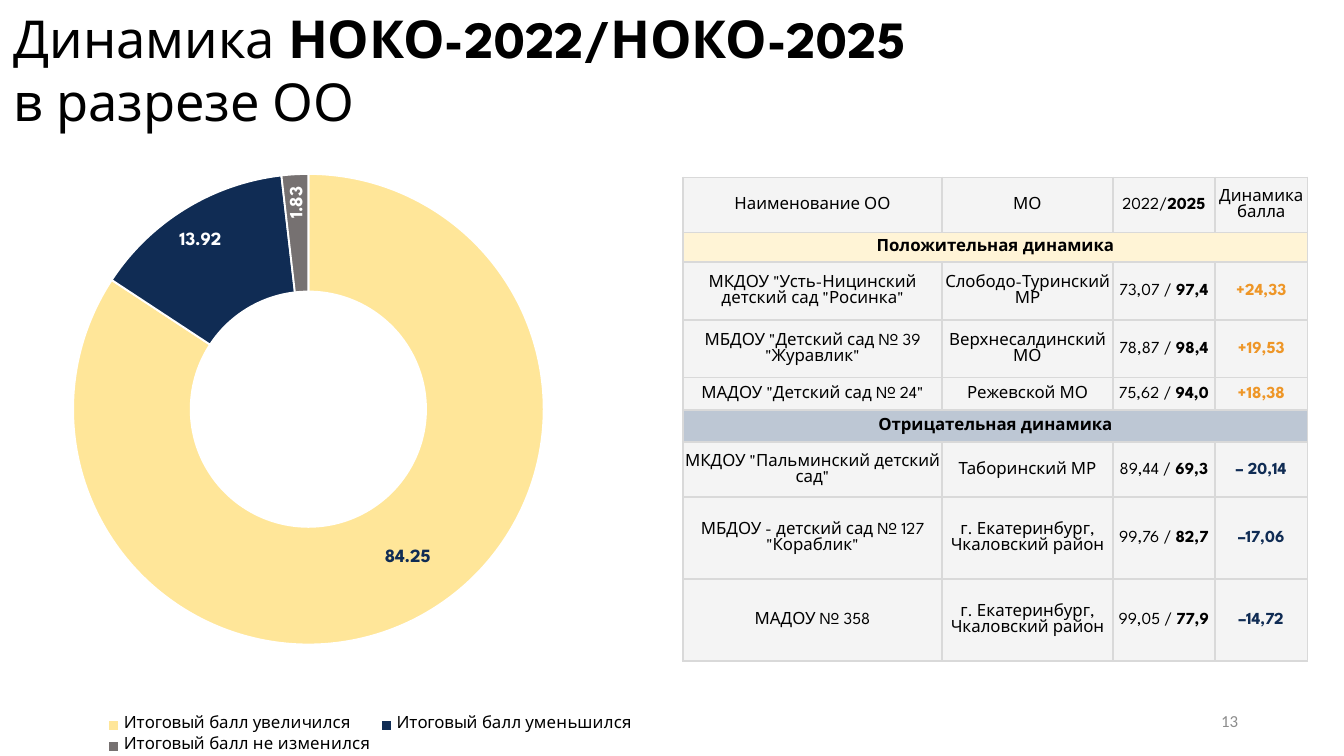
import pptx
import pptx.chart.data
import pptx.dml.color
import pptx.enum.chart
import pptx.enum.text
import pptx.oxml
import pptx.oxml.ns
import pptx.util

Inches, Pt = pptx.util.Inches, pptx.util.Pt
RGBColor = pptx.dml.color.RGBColor
PP_ALIGN = pptx.enum.text.PP_ALIGN
MSO_ANCHOR = pptx.enum.text.MSO_ANCHOR

BLACK = RGBColor(0x00, 0x00, 0x00)
WHITE = RGBColor(0xFF, 0xFF, 0xFF)
GRAY = RGBColor(0x8C, 0x8C, 0x8C)
NAVY = RGBColor(0x10, 0x2C, 0x54)
YELLOW = RGBColor(0xFF, 0xE6, 0x99)
STONE = RGBColor(0x76, 0x71, 0x71)
ORANGE = RGBColor(0xEE, 0x96, 0x27)
CELL_GRAY = RGBColor(0xF2, 0xF2, 0xF2)
PALE_YELLOW = RGBColor(0xFF, 0xF2, 0xCC)
PALE_BLUE = RGBColor(0xAD, 0xB9, 0xCA)
BORDER = RGBColor(0xD9, 0xD9, 0xD9)
FONT = "League Spartan"

TITLE = [
    [("Динамика ", False), ("НОКО-2022/НОКО-2025", True)],
    [("в разрезе ОО", False)],
]
PAGE_NUMBER = "13"

# category, share, slice colour, label colour, label shift as part of the chart
SHARES = [
    ("Итоговый балл увеличился", 84.25, YELLOW, NAVY, (0.02, -0.01)),
    ("Итоговый балл уменьшился", 13.92, NAVY, WHITE, (-0.02, -0.03)),
    ("Итоговый балл не изменился", 1.83, STONE, WHITE, (0, -0.05)),
]

HEADER = ("Наименование ОО", "МО", "2022/", "2025", "Динамика балла")
# heading, heading fill, change colour, rows of: name, area, 2022, 2025, change
GROUPS = [
    ("Положительная динамика", PALE_YELLOW, ORANGE, [
        ('МКДОУ "Усть-Ницинский детский сад "Росинка"',
         "Слободо-Туринский МР", "73,07 / ", "97,4", "+24,33"),
        ('МБДОУ "Детский сад № 39 "Журавлик"',
         "Верхнесалдинский МО", "78,87 / ", "98,4", "+19,53"),
        ('МАДОУ "Детский сад № 24"', "Режевской МО", "75,62 / ", "94,0", "+18,38"),
    ]),
    ("Отрицательная динамика", PALE_BLUE, NAVY, [
        ('МКДОУ "Пальминский детский сад"',
         "Таборинский МР", "89,44 / ", "69,3", "– 20,14"),
        ('МБДОУ - детский сад № 127 "Кораблик"',
         "г. Екатеринбург, Чкаловский район", "99,76 / ", "82,7", "–17,06"),
        ("МАДОУ № 358",
         "г. Екатеринбург, Чкаловский район", "99,05 / ", "77,9", "–14,72"),
    ]),
]
COLUMN_WIDTHS = [1.93, 1.27, 0.76, 0.69]
ROW_HEIGHTS = [0.41, 0.22, 0.43, 0.43, 0.24, 0.24, 0.41, 0.61, 0.61]


def add_text(paragraph, text, size=9, bold=False, color=BLACK, font=FONT):
    run = paragraph.add_run()
    run.text = text
    run.font.size = Pt(size)
    run.font.bold = bold
    run.font.name = font
    run.font.color.rgb = color


def style_cell(cell, fill):
    """Set margins, a fill of 80 % opacity and thin borders on all sides."""
    cell.margin_left = cell.margin_right = cell.margin_top = Inches(0.01)
    cell.margin_bottom = 0
    cell.vertical_anchor = MSO_ANCHOR.MIDDLE
    cell.fill.solid()
    cell.fill.fore_color.rgb = fill
    properties = cell._tc.get_or_add_tcPr()
    namespace = pptx.oxml.ns.nsdecls("a")
    shade = properties.find(".//" + pptx.oxml.ns.qn("a:srgbClr"))
    shade.append(pptx.oxml.parse_xml(f'<a:alpha {namespace} val="80000"/>'))
    for position, side in enumerate(("lnL", "lnR", "lnT", "lnB")):
        properties.insert(position, pptx.oxml.parse_xml(
            f'<a:{side} {namespace} w="12700"><a:solidFill>'
            f'<a:srgbClr val="{BORDER}"/></a:solidFill></a:{side}>'))


def fill_cell(cell, parts):
    """Write (text, bold, colour) parts as one centred paragraph."""
    paragraph = cell.text_frame.paragraphs[0]
    paragraph.alignment = PP_ALIGN.CENTER
    for text, bold, color in parts:
        add_text(paragraph, text, bold=bold, color=color)


def fill_row(cells, content, change_bold, change_color):
    name, area, before, after, change = content
    columns = [
        [(name, False, BLACK)],
        [(area, False, BLACK)],
        [(before, False, BLACK), (after, True, BLACK)],
        [(change, change_bold, change_color)],
    ]
    for cell, parts in zip(cells, columns):
        style_cell(cell, CELL_GRAY)
        fill_cell(cell, parts)


def manual_layout(modes=("xMode", "yMode"), target="", **values):
    parts = [("layoutTarget", target)] if target else []
    parts += [(mode, "edge") for mode in modes]
    parts += values.items()
    body = "".join(f'<c:{tag} val="{value}"/>' for tag, value in parts)
    return pptx.oxml.parse_xml(
        f'<c:layout {pptx.oxml.ns.nsdecls("c")}>'
        f'<c:manualLayout>{body}</c:manualLayout></c:layout>')


def add_title(slide):
    title = slide.shapes.title
    title.left, title.top, title.width, title.height = 0, 0, Inches(10), Inches(1.04)
    frame = title.text_frame
    frame.vertical_anchor = MSO_ANCHOR.TOP
    frame.auto_size = pptx.enum.text.MSO_AUTO_SIZE.SHAPE_TO_FIT_TEXT
    for index, line in enumerate(TITLE):
        paragraph = frame.add_paragraph() if index else frame.paragraphs[0]
        paragraph.alignment = PP_ALIGN.LEFT
        for text, bold in line:
            add_text(paragraph, text, size=28, bold=bold)


def add_page_number(slide):
    box = slide.shapes.add_textbox(Inches(7.06), Inches(5.21), Inches(2.25), Inches(0.3))
    frame = box.text_frame
    frame.word_wrap = True
    frame.vertical_anchor = MSO_ANCHOR.MIDDLE
    frame.paragraphs[0].alignment = PP_ALIGN.RIGHT
    add_text(frame.paragraphs[0], PAGE_NUMBER, color=GRAY, font="Calibri")


def add_share_chart(slide):
    data = pptx.chart.data.CategoryChartData(number_format="0.00")
    data.categories = [share[0] for share in SHARES]
    data.add_series("Series 1", [share[1] for share in SHARES])
    chart = slide.shapes.add_chart(
        pptx.enum.chart.XL_CHART_TYPE.DOUGHNUT,
        Inches(-0.12), Inches(1.16), Inches(5.75), Inches(4.49), data).chart
    chart.has_title = False
    chart.font.name = FONT
    chart.font.size = Pt(10)
    chart.font.color.rgb = BLACK
    chart.has_legend = True
    legend = chart.legend
    legend.position = pptx.enum.chart.XL_LEGEND_POSITION.BOTTOM
    legend.include_in_layout = False
    legend.font.size = Pt(9)
    legend.font.name = FONT
    legend.font.color.rgb = BLACK
    legend._element.find(pptx.oxml.ns.qn("c:legendPos")).addnext(
        manual_layout(x=0.01, y=0.88, w=0.99, h=0.08))

    plot = chart.plots[0]
    plot.vary_by_categories = True
    plot.has_data_labels = True
    plot.data_labels.show_value = True
    plot.data_labels.show_percentage = False
    plot.data_labels.number_format = "0.00"
    plot.data_labels.number_format_is_linked = False
    series = plot.series[0]
    for index, (_, _, slice_color, label_color, _) in enumerate(SHARES):
        point = series.points[index]
        point.format.fill.solid()
        point.format.fill.fore_color.rgb = slice_color
        point.format.line.color.rgb = WHITE
        point.format.line.width = Pt(1)
        font = point.data_label.font
        font.name = FONT
        font.size = Pt(10)
        font.bold = True
        font.color.rgb = label_color
    labels = series._element.xpath(".//c:dLbl")
    for label, (*_, (shift_x, shift_y)) in zip(labels, SHARES):
        label.find(pptx.oxml.ns.qn("c:idx")).addnext(
            manual_layout(modes=(), x=shift_x, y=shift_y))
    # The narrow last slice carries its label upright
    labels[-1].xpath(".//a:bodyPr")[0].set("rot", "-5400000")

    area = chart._chartSpace.chart.plotArea
    for layout in area.findall(pptx.oxml.ns.qn("c:layout")):
        area.remove(layout)
    area.insert(0, manual_layout(target="inner", x=0.1, y=0.03, w=0.64, h=0.78))


def add_score_table(slide):
    table = slide.shapes.add_table(
        len(ROW_HEIGHTS), len(COLUMN_WIDTHS), Inches(5.08), Inches(1.32),
        Inches(sum(COLUMN_WIDTHS)), Inches(sum(ROW_HEIGHTS))).table
    table.first_row = table.horz_banding = False
    for column, width in zip(table.columns, COLUMN_WIDTHS):
        column.width = Inches(width)
    for row, height in zip(table.rows, ROW_HEIGHTS):
        row.height = Inches(height)

    rows = iter(table.rows)
    fill_row(next(rows).cells, HEADER, False, BLACK)
    for heading, heading_fill, change_color, entries in GROUPS:
        cells = list(next(rows).cells)
        for cell in cells:
            style_cell(cell, heading_fill)
        cells[0].merge(cells[-1])
        fill_cell(cells[0], [(heading, True, BLACK)])
        for entry in entries:
            fill_row(next(rows).cells, entry, True, change_color)


def main():
    deck = pptx.Presentation()
    deck.slide_width = Inches(10)
    deck.slide_height = deck.slide_width * 9 // 16
    slide = deck.slides.add_slide(deck.slide_layouts[5])
    add_title(slide)
    add_page_number(slide)
    add_share_chart(slide)
    add_score_table(slide)
    deck.save("out.pptx")


if __name__ == "__main__":
    main()
